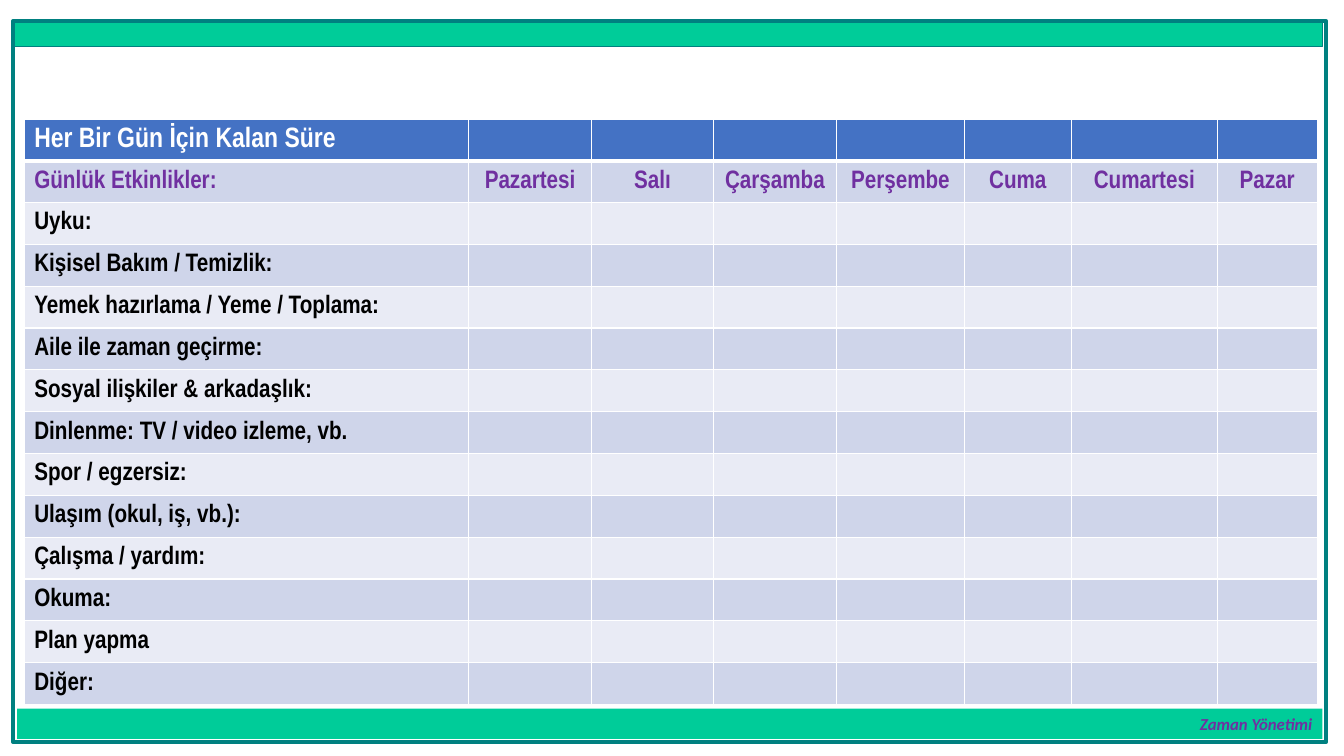
from lxml import etree
from pptx import Presentation
from pptx.dml.color import RGBColor
from pptx.enum.shapes import MSO_SHAPE
from pptx.enum.text import MSO_ANCHOR, PP_ALIGN
from pptx.oxml.ns import qn
from pptx.util import Pt

RECT = MSO_SHAPE.RECTANGLE
MIDDLE = MSO_ANCHOR.MIDDLE
LEFT, CENTER, RIGHT = PP_ALIGN.LEFT, PP_ALIGN.CENTER, PP_ALIGN.RIGHT
PX = 4572
BLANK_LAYOUT = 6

COLORS = {
    "bar": "00CC99",
    "frame": "008080",
    "header": "4472C4",
    "band_dark": "CFD5EA",
    "band_light": "E9EBF5",
    "accent": "7030A0",
    "black": "000000",
    "white": "FFFFFF",
}

TITLE = "Her Bir Gün İçin Kalan Süre"
DAYS = ["Günlük Etkinlikler:", "Pazartesi", "Salı", "Çarşamba", "Perşembe",
        "Cuma", "Cumartesi", "Pazar"]
ACTIVITIES = [
    "Uyku:",
    "Kişisel Bakım / Temizlik:",
    "Yemek hazırlama / Yeme / Toplama:",
    "Aile ile zaman geçirme:",
    "Sosyal ilişkiler & arkadaşlık:",
    "Dinlenme: TV / video izleme, vb.",
    "Spor / egzersiz:",
    "Ulaşım (okul, iş, vb.):",
    "Çalışma / yardım:",
    "Okuma:",
    "Plan yapma",
    "Diğer:",
]
COL_WIDTHS = [882, 244, 242, 244, 254, 212, 290, 198]
ROW_HEIGHT = 83


def px(n):
    """Turn px into EMU."""
    return n * PX


def rgb(name):
    """Look up a colour by name."""
    return RGBColor.from_string(COLORS[name])


def write(tf, text, size=18, color="black", font="Arial Narrow", italic=False, align=LEFT):
    """Write one bold line of text into a text frame."""
    p = tf.paragraphs[0]
    p.alignment = align
    r = p.add_run()
    r.text = text
    r.font.name = font
    r.font.size = Pt(size)
    r.font.bold = True
    r.font.italic = italic
    r.font.color.rgb = rgb(color)


def add_rect(shapes, x, y, w, h, fill=None, line=None, weight=0.75):
    """Add a rectangle with an optional fill and outline."""
    sp = shapes.add_shape(RECT, px(x), px(y), px(w), px(h))
    sp.shadow.inherit = False
    if fill:
        sp.fill.solid()
        sp.fill.fore_color.rgb = rgb(fill)
    else:
        sp.fill.background()
    if line:
        sp.line.color.rgb = rgb(line)
        sp.line.width = Pt(weight)
    else:
        sp.line.fill.background()
    return sp


def add_frame(s):
    """Add the grouped slide frame with its top and bottom bars."""
    shapes = s.shapes.add_group_shape().shapes
    add_rect(shapes, 28, 44, 2596, 48, fill="bar", line="frame")
    add_rect(shapes, 26, 42, 2606, 1430, line="frame", weight=3)
    footer = add_rect(shapes, 34, 1406, 2590, 60, fill="bar")
    tf = footer.text_frame
    tf.word_wrap = True
    tf.vertical_anchor = MIDDLE
    write(tf, "Zaman Yönetimi", size=12, color="accent", font="Calibri",
          italic=True, align=RIGHT)


def set_border(cell, side, weight):
    """Draw one white border of a cell."""
    ln = etree.SubElement(cell._tc.get_or_add_tcPr(), qn(f"a:ln{side}"), w=str(Pt(weight)))
    fill = etree.SubElement(ln, qn("a:solidFill"))
    etree.SubElement(fill, qn("a:srgbClr"), val=COLORS["white"])


def format_cell(cell, row):
    """Give a cell the borders and fill of its row."""
    cell.vertical_anchor = MIDDLE
    for side, weight in (("L", 1), ("R", 1), ("T", 3 if row == 1 else 1),
                         ("B", 3 if row == 0 else 1)):
        set_border(cell, side, weight)
    cell.fill.solid()
    band = "band_dark" if row % 2 else "band_light"
    cell.fill.fore_color.rgb = rgb("header" if row == 0 else band)


def add_schedule(s, x, y):
    """Add the weekly activity table."""
    rows = len(ACTIVITIES) + 2
    table = s.shapes.add_table(rows, len(DAYS), px(x), px(y), px(sum(COL_WIDTHS)),
                               px(rows * ROW_HEIGHT)).table
    for col, width in zip(table.columns, COL_WIDTHS):
        col.width = px(width)
    for i, row in enumerate(table.rows):
        row.height = px(ROW_HEIGHT)
        for cell in row.cells:
            format_cell(cell, i)
    write(table.cell(0, 0).text_frame, TITLE, size=20, color="white")
    for j, day in enumerate(DAYS):
        write(table.cell(1, j).text_frame, day, color="accent",
              align=CENTER if j else LEFT)
    for i, activity in enumerate(ACTIVITIES, start=2):
        write(table.cell(i, 0).text_frame, activity)


def main():
    """Build the slide and save it."""
    prs = Presentation()
    prs.slide_width, prs.slide_height = px(2667), px(1500)
    s = prs.slides.add_slide(prs.slide_layouts[BLANK_LAYOUT])
    add_frame(s)
    add_schedule(s, 48, 236)
    prs.save("out.pptx")


if __name__ == "__main__":
    main()
